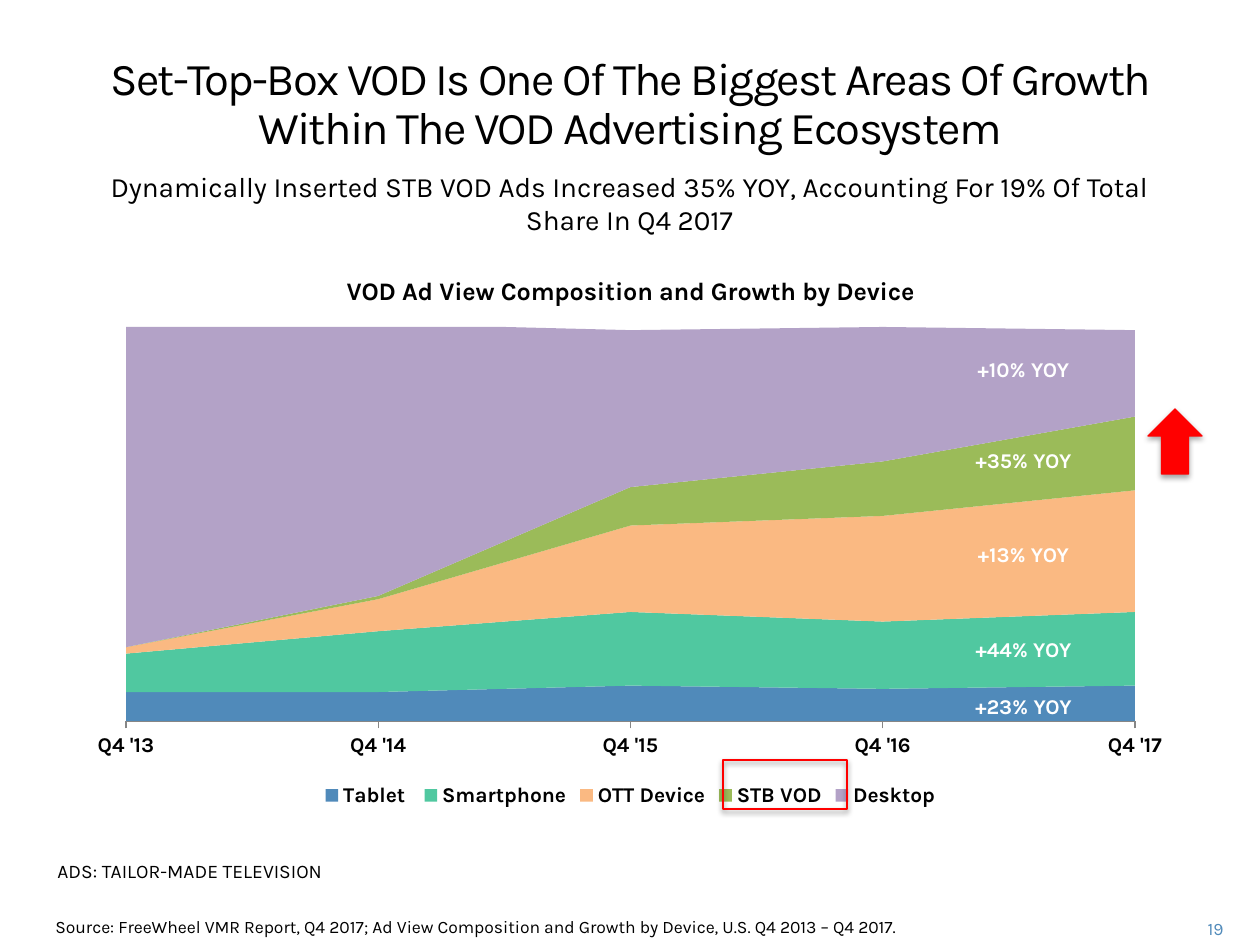
"""Build the set-top-box VOD growth slide."""
from lxml import etree
from pptx import Presentation, util as u
from pptx.chart.data import CategoryChartData
from pptx.dml.color import RGBColor
from pptx.enum import chart as ch, shapes, text
from pptx.oxml import parse_xml
from pptx.oxml.ns import nsdecls, qn

PX = 914400 / 126
FACE = "Karla"
rgb = RGBColor.from_string


def box(words, *spot, size=12, color="000000", bold=False, align="CENTER", lead=None, track=None):
    frame = slide.shapes.add_textbox(*[round(n * PX) for n in spot]).text_frame
    frame.word_wrap = True
    para = frame.paragraphs[0]
    para.alignment = getattr(text.PP_ALIGN, align)
    if lead:
        para.line_spacing = u.Pt(lead)
    run = para.add_run()
    run.text = words
    font = run.font
    font.name, font.size, font.bold = FACE, u.Pt(size), bold
    font.color.rgb = rgb(color)
    if track:
        run._r.get_or_add_rPr().set("spc", str(track))


deck = Presentation()
deck.slide_width, deck.slide_height = u.Inches(10), u.Inches(7.5)
slide = deck.slides.add_slide(deck.slide_layouts[6])

box("19", 1159, 912, 77, 32, size=10, color="508ABA", align="RIGHT")
box("Set-Top-Box VOD Is One Of The Biggest Areas Of Growth Within The VOD Advertising Ecosystem",
    30, 49, 1200, 81, size=26, lead=28, track=-100)
box("Source: FreeWheel VMR Report, Q4 2017; Ad View Composition and Growth by Device, "
    "U.S. Q4 2013 – Q4 2017.", 43, 910, 1207, 34, size=10, align="LEFT")

data = CategoryChartData(number_format="0")
data.categories = [f"Q4 '{year}" for year in range(13, 18)]
parts = [
    ("Tablet ", (9, 9, 11, 10, 11), "508ABA"),
    ("Smartphone", (12, 19, 23, 21, 23), "50C8A0"),
    ("OTT Device", (2, 10, 27, 33, 38), "FAB982"),
    ("STB VOD", (0, 1, 12, 17, 23), "9BBB59"),
    ("Desktop", (100, 85, 49, 42, 27), "B3A2C7"),
]
for name, vals, tint in parts:
    data.add_series(name, vals)
left, top, wide, high = 76, 253, 1109, 560
chart = slide.shapes.add_chart(ch.XL_CHART_TYPE.AREA_STACKED,
                               *[round(n * PX) for n in (left, top, wide, high)], data).chart
chart.font.name, chart.font.size, chart.font.bold = FACE, u.Pt(12), True
chart.font.color.rgb = rgb("000000")
for row, (name, vals, tint) in zip(chart.plots[0].series, parts):
    row.format.fill.solid()
    row.format.fill.fore_color.rgb = rgb(tint)

chart.has_title = True
head = chart.chart_title.text_frame
head.text = "VOD Ad View Composition and Growth by Device"
font = head.paragraphs[0].runs[0].font
font.name, font.size, font.bold = FACE, u.Pt(14.4), True
font.color.rgb = rgb("000000")
chart.has_legend = True
chart.legend.position = ch.XL_LEGEND_POSITION.BOTTOM
chart.legend.include_in_layout = False

axis = chart.value_axis
axis.minimum_scale, axis.maximum_scale = 0, 123
axis.has_major_gridlines = False
axis.visible = False
axis._element.find(qn("c:crossBetween")).set("val", "midCat")
base = chart.category_axis
base.has_major_gridlines = False
base.major_tick_mark = ch.XL_TICK_MARK.OUTSIDE
base.format.line.color.rgb = rgb("868686")

area = chart._chartSpace.chart.plotArea
for old in area.findall(qn("c:layout")):
    area.remove(old)
plan = etree.Element(qn("c:layout"))
hand = etree.SubElement(plan, qn("c:manualLayout"))
for tag, val in (("layoutTarget", "inner"), ("xMode", "edge"), ("yMode", "edge"),
                 ("x", (126 - left) / wide), ("y", (327 - top) / high),
                 ("w", 1009 / wide), ("h", 394 / high)):
    etree.SubElement(hand, qn(f"c:{tag}")).set("val", str(val))
area.insert(0, plan)

for rate, y in ((10, 350), (35, 441), (13, 535), (44, 630), (23, 687)):
    box(f"+{rate}% YOY", 932, y, 183, 38, color="FFFFFF", bold=True)
box("Dynamically Inserted STB VOD Ads Increased 35% YOY, Accounting For 19% Of Total "
    "Share In Q4 2017", 84, 163, 1091, 81, size=16)

for kind, spot, fill, width in (("UP_ARROW", (1148, 409, 54, 65), "FF0000", 0.75),
                                ("RECTANGLE", (723, 760, 124, 49), None, 1.5)):
    mark = slide.shapes.add_shape(getattr(shapes.MSO_SHAPE, kind), *[round(n * PX) for n in spot])
    if fill:
        mark.fill.solid()
        mark.fill.fore_color.rgb = rgb(fill)
    else:
        mark.fill.background()
    mark.line.color.rgb = rgb("FF0000")
    mark.line.width = u.Pt(width)
    mark.shadow.inherit = False
    mark._element.spPr.find(qn("a:effectLst")).append(parse_xml(
        f'<a:outerShdw {nsdecls("a")} blurRad="40000" dist="23000" dir="5400000" rotWithShape="0">'
        '<a:srgbClr val="000000"><a:alpha val="35000"/></a:srgbClr></a:outerShdw>'))

box("ADS: TAILOR-MADE TELEVISION", 45, 853, 388, 59, size=11, align="LEFT")
deck.save("out.pptx")
